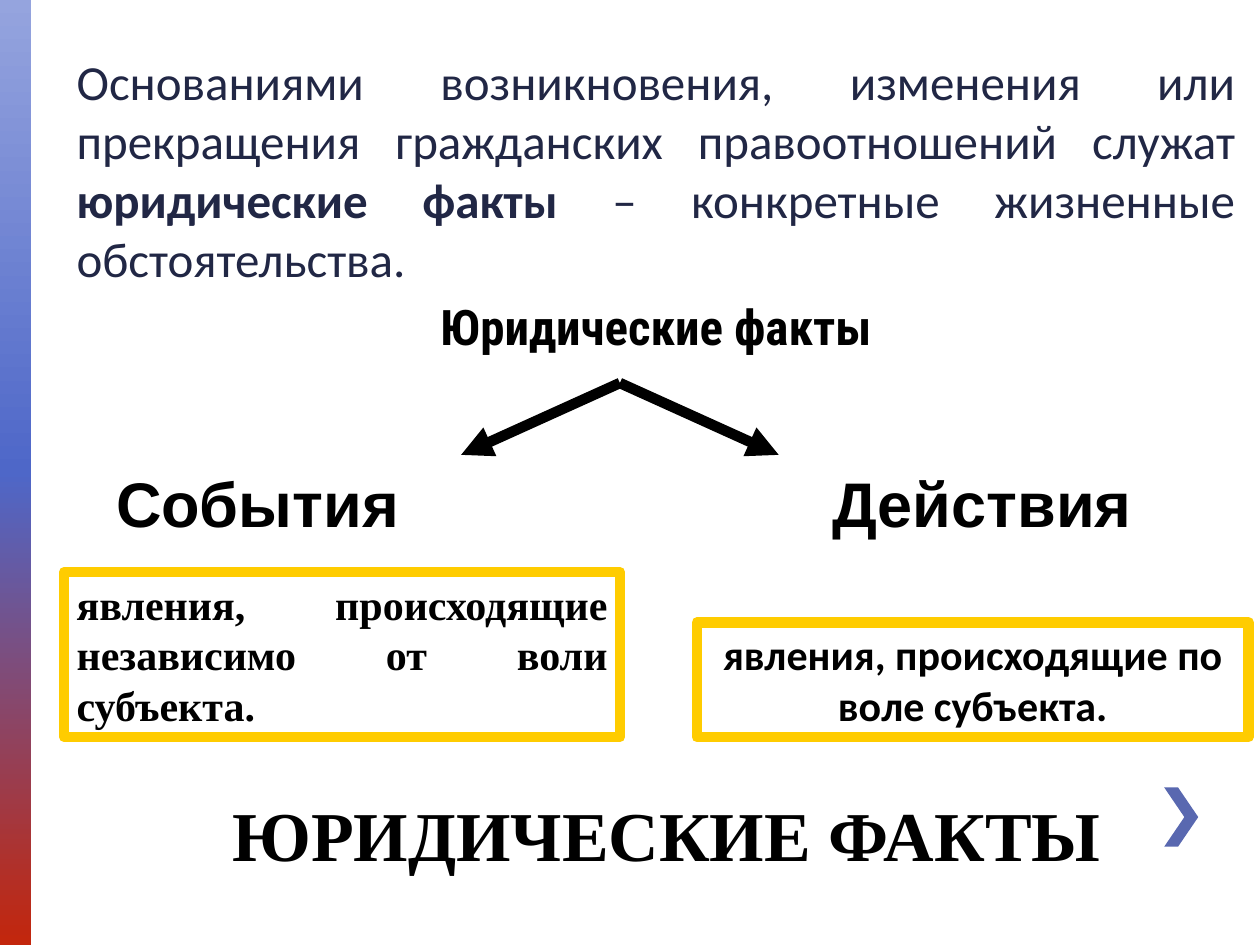
from dataclasses import dataclass
from copy import deepcopy

from lxml import etree
from pptx import Presentation
from pptx import util as u
from pptx.dml.color import RGBColor
from pptx.enum import shapes, text
from pptx.oxml.ns import qn


@dataclass(frozen=True)
class Theme:
    """Colours, fonts and type sizes of the slide."""
    ink: str = "000000"
    navy: str = "212745"
    paper: str = "FFFFFF"
    frame: str = "FFCC00"
    chevron: str = "5968B0"
    stripe: tuple = ((0, "95A4DE"), (0.5, "4E67C8"), (1, "C3260C"))
    title: int = 40
    label: int = 36
    body: int = 28
    note: int = 24
    stroke: int = 6
    sans: str = "Calibri"
    serif: str = "Times New Roman"
    narrow: str = "Roboto Condensed"
    plain: str = "Arial"


THEME = Theme()
ALIGN = text.PP_ALIGN


def rgb(code):
    """Return a colour object for a hex code."""
    return RGBColor.from_string(code)


def inches(*values):
    """Return the values as lengths in inches."""
    return [u.Inches(value) for value in values]


def add_span(para, words, *, size, font, color=THEME.ink, bold=True):
    """Append formatted words to a paragraph."""
    span = para.add_run()
    span.text = words
    span.font.size = u.Pt(size)
    span.font.name = font
    span.font.bold = bold
    span.font.color.rgb = rgb(color)


def add_text_box(page, area, wrap=True, anchor=text.MSO_ANCHOR.TOP):
    """Add an empty text box and return its text frame."""
    frame = page.shapes.add_textbox(*inches(*area)).text_frame
    frame.word_wrap = wrap
    frame.vertical_anchor = anchor
    return frame


def add_stripe(page):
    """Add the gradient stripe along the left edge."""
    stripe = page.shapes.add_shape(shapes.MSO_SHAPE.RECTANGLE, *inches(0, 0, 0.25, 7.5))
    stripe.shadow.inherit = False
    stripe.line.fill.background()
    stripe.fill.gradient()
    stripe.fill.gradient_angle = 270
    stop_list = stripe.fill._fill._gradFill.find(qn("a:gsLst"))
    stop_list.append(deepcopy(stop_list[-1]))
    for stop, (position, color) in zip(stripe.fill.gradient_stops, THEME.stripe):
        stop.position = position
        stop.color.rgb = rgb(color)


def add_chevron(page):
    """Add the chevron beside the title."""
    left, top, width, height, bar = inches(9.24, 6.25, 0.27, 0.47, 0.11)
    middle, right, bottom = top + height // 2, left + width, top + height
    builder = page.shapes.build_freeform(left + bar, top)
    builder.add_line_segments([
        (left, top), (right - bar, middle), (left, bottom),
        (left + bar, bottom), (right, middle),
    ])
    chevron = builder.convert_to_shape()
    chevron.shadow.inherit = False
    chevron.fill.solid()
    chevron.fill.fore_color.rgb = rgb(THEME.chevron)
    chevron.line.fill.background()


def add_title(page):
    """Add the slide title."""
    frame = add_text_box(page, (1.33, 5.75, 7.92, 1.25), anchor=text.MSO_ANCHOR.BOTTOM)
    para = frame.paragraphs[0]
    para.alignment = ALIGN.CENTER
    add_span(para, "ЮРИДИЧЕСКИЕ ФАКТЫ", size=THEME.title, font=THEME.serif)


def add_body(page):
    """Add the definition and the heading of the scheme."""
    frame = add_text_box(page, (0.51, 0.36, 9.39, 5.49))
    definition, heading = frame.paragraphs[0], frame.add_paragraph()
    for para, align in ((definition, ALIGN.JUSTIFY), (heading, ALIGN.CENTER)):
        para.alignment = align
        para.space_before = u.Pt(0.2 * THEME.body)
    for words, bold in (
        ("Основаниями возникновения, изменения или прекращения "
         "гражданских правоотношений служат ", False),
        ("юридические факты ", True),
        ("– конкретные жизненные обстоятельства.", False),
    ):
        add_span(definition, words, size=THEME.body, font=THEME.sans,
                 color=THEME.navy, bold=bold)
    add_span(heading, "Юридические факты", size=THEME.body, font=THEME.narrow)


def add_label(page, words, left):
    """Add the name of one branch."""
    para = add_text_box(page, (left, 3.64, 3.07, 0.59), wrap=False).paragraphs[0]
    para.alignment = ALIGN.CENTER
    add_span(para, words, size=THEME.label, font=THEME.plain)


def add_arrow(page, start, end):
    """Add a thick arrow between two points."""
    arrow = page.shapes.add_connector(
        shapes.MSO_CONNECTOR.STRAIGHT, *inches(*start, *end))
    arrow.line.width = u.Pt(THEME.stroke)
    arrow.line.color.rgb = rgb(THEME.ink)
    etree.SubElement(arrow.line._get_or_add_ln(), qn("a:tailEnd"), type="triangle")
    etree.SubElement(arrow._element.spPr, qn("a:effectLst"))


def add_note(page, words, area, *, font, align):
    """Add a framed box that explains one branch."""
    box = page.shapes.add_shape(shapes.MSO_SHAPE.RECTANGLE, *inches(*area))
    box.shadow.inherit = False
    box.fill.solid()
    box.fill.fore_color.rgb = rgb(THEME.paper)
    box.line.color.rgb = rgb(THEME.frame)
    box.line.width = u.Pt(THEME.stroke)
    frame = box.text_frame
    frame.word_wrap = True
    frame.auto_size = text.MSO_AUTO_SIZE.SHAPE_TO_FIT_TEXT
    frame.vertical_anchor = text.MSO_ANCHOR.TOP
    para = frame.paragraphs[0]
    para.alignment = align
    add_span(para, words, size=THEME.note, font=font)


def main():
    """Build the slide and save the deck."""
    deck = Presentation()
    deck.slide_width, deck.slide_height = inches(10, 7.5)
    page = deck.slides.add_slide(deck.slide_layouts[6])
    add_stripe(page)
    add_chevron(page)
    add_title(page)
    add_body(page)
    fork_x, fork_y, reach, drop = 4.92, 3.04, 1.26, 0.57
    for words, left, side in (("События", 0.51, -1), ("Действия", 6.26, 1)):
        add_label(page, words, left)
        add_arrow(page, (fork_x, fork_y), (fork_x + side * reach, fork_y + drop))
    add_note(page, "явления, происходящие независимо от воли субъекта.",
             (0.51, 4.54, 4.41, 1.31), font=THEME.serif, align=ALIGN.JUSTIFY)
    add_note(page, "явления, происходящие по воле субъекта.",
             (5.53, 4.94, 4.38, 0.91), font=THEME.sans, align=ALIGN.CENTER)
    deck.save("out.pptx")


if __name__ == "__main__":
    main()
